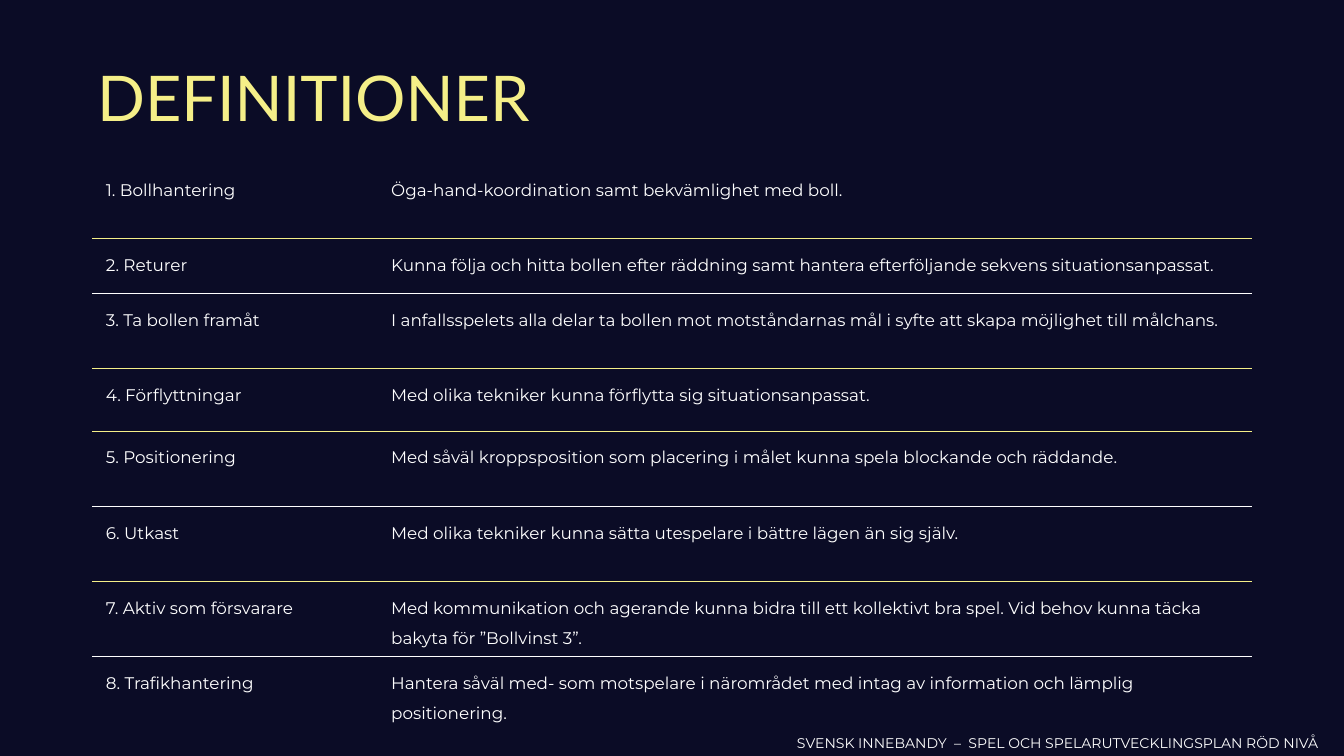
from dataclasses import dataclass

from lxml import etree
from pptx import Presentation, util as u
from pptx.dml.color import RGBColor
from pptx.enum import text as t
from pptx.oxml.ns import qn


@dataclass(frozen=True)
class Theme:
    background: str = "0B0C26"
    accent: str = "F5EF88"
    light: str = "FFFFFF"
    heading_font: str = "Lato"
    body_font: str = "Montserrat"
    title_size: int = 90
    body_size: int = 24
    footer_size: int = 20
    rule_width: float = 0.5


THEME = Theme()
WIDTH, HEIGHT = 26.66, 15
MARGIN = 1.83
CONTENT_WIDTH = WIDTH - 2 * MARGIN
TERM_WIDTH = 5.66
TALL, MEDIUM, SHORT = 1.49, 1.24, 1.09

# Term, definition, row height, colour of the rule below
DEFINITIONS = [
    ("1. Bollhantering", "Öga-hand-koordination samt bekvämlighet med boll.", TALL, THEME.accent),
    ("2. Returer",
     "Kunna följa och hitta bollen efter räddning samt hantera efterföljande sekvens situationsanpassat.",
     SHORT, THEME.light),
    ("3. Ta bollen framåt",
     "I anfallsspelets alla delar ta bollen mot motståndarnas mål i syfte att skapa möjlighet till målchans.",
     TALL, THEME.accent),
    ("4. Förflyttningar", "Med olika tekniker kunna förflytta sig situationsanpassat.", MEDIUM, THEME.accent),
    ("5. Positionering",
     "Med såväl kroppsposition som placering i målet kunna spela blockande och räddande.",
     TALL, THEME.light),
    ("6. Utkast", "Med olika tekniker kunna sätta utespelare i bättre lägen än sig själv.", TALL, THEME.accent),
    ("7. Aktiv som försvarare",
     "Med kommunikation och agerande kunna bidra till ett kollektivt bra spel. "
     "Vid behov kunna täcka bakyta för ”Bollvinst 3”.",
     TALL, THEME.light),
    ("8. Trafikhantering",
     "Hantera såväl med- som motspelare i närområdet med intag av information och lämplig positionering.",
     TALL, None),
]


def write_text(frame, content, *, size, font=THEME.body_font, color=THEME.light,
               spacing=1.0, anchor=t.MSO_ANCHOR.TOP, wrap=True):
    frame.word_wrap = wrap
    frame.vertical_anchor = anchor
    paragraph = frame.paragraphs[0]
    paragraph.line_spacing = spacing
    run = paragraph.add_run()
    run.text = content
    run.font.name = font
    run.font.size = u.Pt(size)
    run.font.color.rgb = RGBColor.from_string(color)


def add_text(slide, box, content, **text_format):
    shape = slide.shapes.add_textbox(*map(u.Inches, box))
    write_text(shape.text_frame, content, **text_format)


def set_borders(cell, top, bottom):
    """Draw the horizontal rules of a cell; None means no line."""
    properties = cell._tc.get_or_add_tcPr()
    sides = {"a:lnL": None, "a:lnR": None, "a:lnT": top, "a:lnB": bottom}
    for position, (tag, color) in enumerate(sides.items()):
        line = etree.Element(qn(tag), w=str(u.Pt(THEME.rule_width)))
        if color:
            fill = etree.SubElement(line, qn("a:solidFill"))
            etree.SubElement(fill, qn("a:srgbClr"), val=color)
        else:
            etree.SubElement(line, qn("a:noFill"))
        properties.insert(position, line)


def add_title(slide, box):
    add_text(slide, box, "DEFINITIONER", size=THEME.title_size, font=THEME.heading_font,
             color=THEME.accent, spacing=0.9, anchor=t.MSO_ANCHOR.MIDDLE)


def add_definitions(slide, box):
    table = slide.shapes.add_table(len(DEFINITIONS), 2, *map(u.Inches, box)).table
    table.first_row = table.horz_banding = False
    table.columns[0].width = u.Inches(TERM_WIDTH)
    table.columns[1].width = u.Inches(box[2] - TERM_WIDTH)

    rule_above = None
    for row, (term, definition, height, rule_below) in zip(table.rows, DEFINITIONS):
        row.height = u.Inches(height)
        for cell, content in zip(row.cells, (term, definition)):
            cell.margin_left = cell.margin_right = u.Inches(0.27)
            cell.margin_top = cell.margin_bottom = u.Inches(0.13)
            cell.fill.solid()
            cell.fill.fore_color.rgb = RGBColor.from_string(THEME.background)
            set_borders(cell, rule_above, rule_below)
            write_text(cell.text_frame, content, size=THEME.body_size, spacing=1.5)
        rule_above = rule_below


def add_footer(slide, box):
    add_text(slide, box, "SVENSK INNEBANDY  –  SPEL OCH SPELARUTVECKLINGSPLAN RÖD NIVÅ",
             size=THEME.footer_size)


def main():
    presentation = Presentation()
    presentation.slide_width = u.Inches(WIDTH)
    presentation.slide_height = u.Inches(HEIGHT)
    slide = presentation.slides.add_slide(presentation.slide_layouts[6])
    slide.background.fill.solid()
    slide.background.fill.fore_color.rgb = RGBColor.from_string(THEME.background)

    table_height = sum(height for _, _, height, _ in DEFINITIONS)
    add_title(slide, (MARGIN, 0.55, CONTENT_WIDTH, 2.9))
    add_definitions(slide, (MARGIN, 3.24, CONTENT_WIDTH, table_height))
    add_footer(slide, (15.71, 14.52, 11.3, 0.44))

    presentation.save("out.pptx")


if __name__ == "__main__":
    main()
